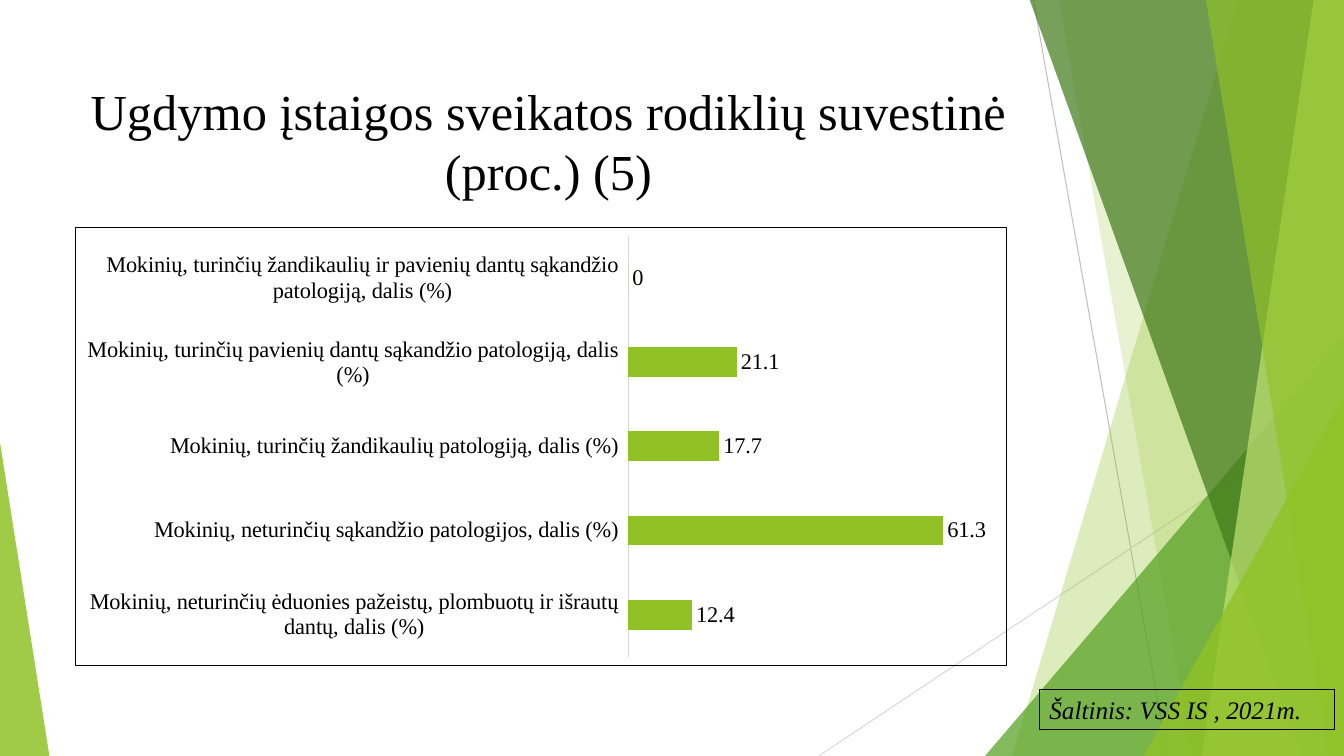
from dataclasses import dataclass

from lxml import etree
from pptx import Presentation
from pptx.chart.data import CategoryChartData
from pptx.dml.color import RGBColor
from pptx.enum.chart import XL_CHART_TYPE, XL_LABEL_POSITION, XL_TICK_LABEL_POSITION, XL_TICK_MARK
from pptx.enum.shapes import MSO_CONNECTOR, MSO_SHAPE
from pptx.enum.text import MSO_ANCHOR, PP_ALIGN
from pptx.oxml import parse_xml
from pptx.oxml.ns import nsdecls, qn
from pptx.util import Inches, Pt

BAR = XL_CHART_TYPE.BAR_CLUSTERED
OUTSIDE = XL_LABEL_POSITION.OUTSIDE_END
LABELS_LOW = XL_TICK_LABEL_POSITION.LOW
NO_TICK = XL_TICK_MARK.NONE
STRAIGHT = MSO_CONNECTOR.STRAIGHT
TRIANGLE = MSO_SHAPE.ISOSCELES_TRIANGLE
MIDDLE = MSO_ANCHOR.MIDDLE
CENTER, LEFT = PP_ALIGN.CENTER, PP_ALIGN.LEFT


@dataclass(frozen=True)
class Theme:
    font: str = "Times New Roman"
    chart_font: str = "Cabin"
    text: str = "000000"
    green: str = "90C226"
    mid_green: str = "54A021"
    dark_green: str = "3F7819"
    light_green: str = "C0E474"
    grey: str = "BFBFBF"
    light_grey: str = "D9D9D9"
    title: int = 36
    source: int = 18
    label: int = 16
    chart: int = 10
    hairline: float = 0.75


T = Theme()
WIDTH, HEIGHT, TOP = 13.33, 7.5, -0.01

RAYS = [
    ((10.25, 0), (11.58, HEIGHT), T.grey),
    ((WIDTH, 4.03), (8.12, HEIGHT), T.light_grey),
]
BACK_BANDS = [(12.28, 10.04, T.green, 30), (10.5, 11.83, T.green, 20)]
FRONT_BANDS = [
    (10.21, 12.91, T.dark_green, 70),
    (13.03, 11.92, T.light_green, 70),
    (11.96, 13.18, T.green, 65),
]
SHARES = [
    ("Mokinių, neturinčių ėduonies pažeistų, plombuotų ir išrautų dantų, dalis (%)", 12.4),
    ("Mokinių, neturinčių sąkandžio patologijos, dalis (%)", 61.3),
    ("Mokinių, turinčių žandikaulių patologiją, dalis (%)", 17.7),
    ("Mokinių, turinčių pavienių dantų sąkandžio patologiją, dalis (%)", 21.1),
    ("Mokinių, turinčių žandikaulių ir pavienių dantų sąkandžio patologiją, dalis (%)", 0),
]


def rgb(color):
    return RGBColor.from_string(color)


def set_font(font, size, name=T.font, italic=False):
    font.name, font.size, font.italic = name, Pt(size), italic
    font.color.rgb = rgb(T.text)


def set_line(line, color):
    line.color.rgb = rgb(color)
    line.width = Pt(T.hairline)


def paint(shape, color, opacity):
    shape.shadow.inherit = False
    shape.line.fill.background()
    shape.fill.solid()
    shape.fill.fore_color.rgb = rgb(color)
    clr = shape.fill._xPr.find(".//" + qn("a:srgbClr"))
    etree.SubElement(clr, qn("a:alpha")).set("val", str(opacity * 1000))


def add_ray(s, start, end, color):
    ray = s.shapes.add_connector(STRAIGHT, *map(Inches, start + end))
    set_line(ray.line, color)
    etree.SubElement(ray._element.spPr, qn("a:effectLst"))


def add_band(s, top_x, bottom_x, color, opacity):
    points = [(WIDTH, TOP), (WIDTH, HEIGHT), (bottom_x, HEIGHT)]
    builder = s.shapes.build_freeform(Inches(top_x), Inches(TOP))
    builder.add_line_segments([(Inches(x), Inches(y)) for x, y in points])
    paint(builder.convert_to_shape(), color, opacity)


def add_triangle(s, x, y, w, apex, color, opacity):
    sp = s.shapes.add_shape(TRIANGLE, *map(Inches, (x, y, w, HEIGHT - y)))
    sp.adjustments[0] = apex
    paint(sp, color, opacity)


def add_text(s, box, text, size, align, italic=False):
    sp = s.shapes.add_textbox(*map(Inches, box))
    tf = sp.text_frame
    tf.word_wrap = True
    tf.vertical_anchor = MIDDLE
    p = tf.paragraphs[0]
    p.text, p.alignment = text, align
    set_font(p.font, size, italic=italic)
    return sp


def frame_chart(chart):
    cs = chart._chartSpace
    cs.find(qn("c:chart")).addnext(parse_xml(
        f'<c:spPr {nsdecls("c", "a")}><a:noFill/><a:ln w="{Pt(T.hairline)}"><a:solidFill>'
        f'<a:srgbClr val="{T.text}"/></a:solidFill></a:ln></c:spPr>'))
    area = cs.find(".//" + qn("c:plotArea"))
    for old in area.findall(qn("c:layout")):
        area.remove(old)
    settings = [("layoutTarget", "inner"), ("xMode", "edge"), ("yMode", "edge"),
                ("x", 0.594), ("y", 0.02), ("w", 0.386), ("h", 0.96)]
    items = "".join(f'<c:{tag} val="{val}"/>' for tag, val in settings)
    area.insert(0, parse_xml(
        f'<c:layout {nsdecls("c")}><c:manualLayout>{items}</c:manualLayout></c:layout>'))


def add_bar_chart(s, box, shares):
    data = CategoryChartData()
    data.categories = [name for name, _ in shares]
    data.add_series("Series 1", [value for _, value in shares])
    chart = s.shapes.add_chart(BAR, *map(Inches, box), data).chart
    chart.has_title = chart.has_legend = False
    set_font(chart.font, T.chart, T.chart_font)

    cat = chart.category_axis
    cat.major_tick_mark = cat.minor_tick_mark = NO_TICK
    cat.tick_label_position = LABELS_LOW
    cat.has_major_gridlines = False
    set_font(cat.tick_labels.font, T.label)
    set_line(cat.format.line, T.light_grey)
    val = chart.value_axis
    val.visible = val.has_major_gridlines = False
    val.minimum_scale, val.maximum_scale = 0, 70

    plot = chart.plots[0]
    plot.gap_width = 182
    plot.vary_by_categories = False
    fill = plot.series[0].format.fill
    fill.solid()
    fill.fore_color.rgb = rgb(T.green)
    labels = plot.series[0].data_labels
    labels.show_value = True
    labels.position = OUTSIDE
    set_font(labels.font, T.label)
    frame_chart(chart)


def add_backdrop(s):
    for ray in RAYS:
        add_ray(s, *ray)
    for band in BACK_BANDS:
        add_band(s, *band)
    add_triangle(s, 9.77, 3.33, 3.56, 1, T.mid_green, 72)
    for band in FRONT_BANDS:
        add_band(s, *band)
    add_triangle(s, 11.34, 3.93, 1.99, 1, T.green, 80)
    add_triangle(s, 0, 4.39, 0.49, 0, T.green, 85)


def main():
    prs = Presentation()
    prs.slide_width, prs.slide_height = Inches(WIDTH), Inches(HEIGHT)
    s = prs.slides.add_slide(prs.slide_layouts[6])
    add_backdrop(s)
    add_text(s, (0.74, 0.67, 9.4, 1.44),
             "Ugdymo įstaigos sveikatos rodiklių suvestinė (proc.) (5)", T.title, CENTER)
    source = add_text(s, (10.31, 6.84, 2.93, 0.4),
                      "Šaltinis: VSS IS , 2021m.", T.source, LEFT, italic=True)
    set_line(source.line, T.text)
    add_bar_chart(s, (0.74, 2.25, 9.25, 4.36), SHARES)
    prs.save("out.pptx")


if __name__ == "__main__":
    main()
